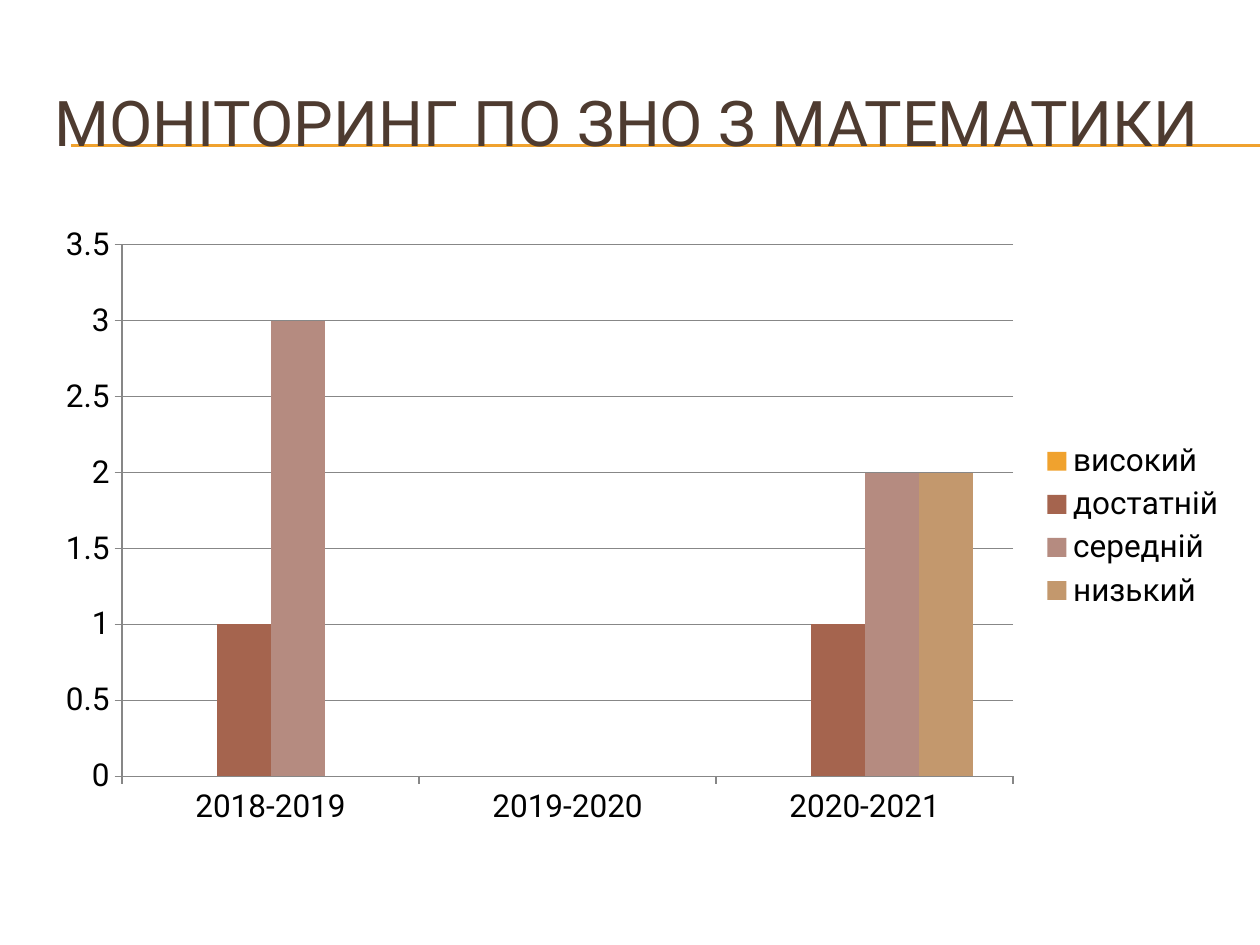
from lxml import etree
from pptx import Presentation
from pptx import util as u
from pptx.chart.data import CategoryChartData
from pptx.dml.color import RGBColor
from pptx.enum import chart as c, shapes, text
from pptx.oxml.ns import qn

TITLE = "МОНІТОРИНГ ПО ЗНО З МАТЕМАТИКИ"
YEARS = ["2018-2019", "2019-2020", "2020-2021"]
AMBER = RGBColor(0xF0, 0xA2, 0x2E)
BROWN = RGBColor(0x4E, 0x3B, 0x30)
GRAY = RGBColor(0x87, 0x87, 0x87)
BLACK = RGBColor(0, 0, 0)
LEVELS = [
    ("високий", (None, None, None), AMBER),
    ("достатній", (1, None, 1), RGBColor(0xA5, 0x64, 0x4E)),
    ("середній", (3, None, 2), RGBColor(0xB5, 0x8B, 0x80)),
    ("низький", (None, None, 2), RGBColor(0xC3, 0x98, 0x6D)),
]
FONT = "Roboto"
SLIDE_SIZE = (1260, 945)
TITLE_BOX = (42, 63, 1197, 116)
CHART_BOX = (42, 214, 1197, 624)
RULE_LEFT = 71
RULE_TOPS = (145, 146)


def px(*lengths):
    return [u.Emu(length * 914400 // 126) for length in lengths]


def add_rule(slide, top):
    rule = slide.shapes.add_connector(
        shapes.MSO_CONNECTOR.STRAIGHT, *px(RULE_LEFT, top, SLIDE_SIZE[0], top))
    rule.line.color.rgb = AMBER
    rule.line.width = u.Pt(0.75)
    etree.SubElement(rule._element.spPr, qn("a:effectLst"))


def add_title(slide):
    frame = slide.shapes.add_textbox(*px(*TITLE_BOX)).text_frame
    frame.word_wrap = True
    frame.vertical_anchor = text.MSO_ANCHOR.MIDDLE
    run = frame.paragraphs[0].add_run()
    run.text = TITLE
    run.font.name = FONT
    run.font.size = u.Pt(36)
    run.font.color.rgb = BROWN


def add_level_chart(slide):
    data = CategoryChartData()
    data.categories = YEARS
    for name, values, _ in LEVELS:
        data.add_series(name, values)
    chart = slide.shapes.add_chart(
        c.XL_CHART_TYPE.COLUMN_CLUSTERED, *px(*CHART_BOX), data).chart
    chart.has_title = False
    chart.font.name = FONT
    chart.font.size = u.Pt(18)
    chart.font.color.rgb = BLACK
    chart.has_legend = True
    chart.legend.position = c.XL_LEGEND_POSITION.RIGHT
    chart.legend.include_in_layout = False

    plot = chart.plots[0]
    plot.vary_by_categories = False
    plot.gap_width = 150
    plot.overlap = 0
    for series, (_, _, color) in zip(plot.series, LEVELS):
        series.format.fill.solid()
        series.format.fill.fore_color.rgb = color

    value_axis = chart.value_axis
    value_axis.minimum_scale = 0
    value_axis.maximum_scale = 3.5
    value_axis.major_unit = 0.5
    value_axis.has_major_gridlines = True
    for axis in (chart.category_axis, value_axis):
        axis.major_tick_mark = c.XL_TICK_MARK.OUTSIDE
    for part in (chart.category_axis, value_axis, value_axis.major_gridlines):
        part.format.line.color.rgb = GRAY
        part.format.line.width = u.Pt(0.75)


presentation = Presentation()
presentation.slide_width, presentation.slide_height = px(*SLIDE_SIZE)
slide = presentation.slides.add_slide(presentation.slide_layouts[6])
for top in RULE_TOPS:
    add_rule(slide, top)
add_title(slide)
add_level_chart(slide)
presentation.save("out.pptx")
